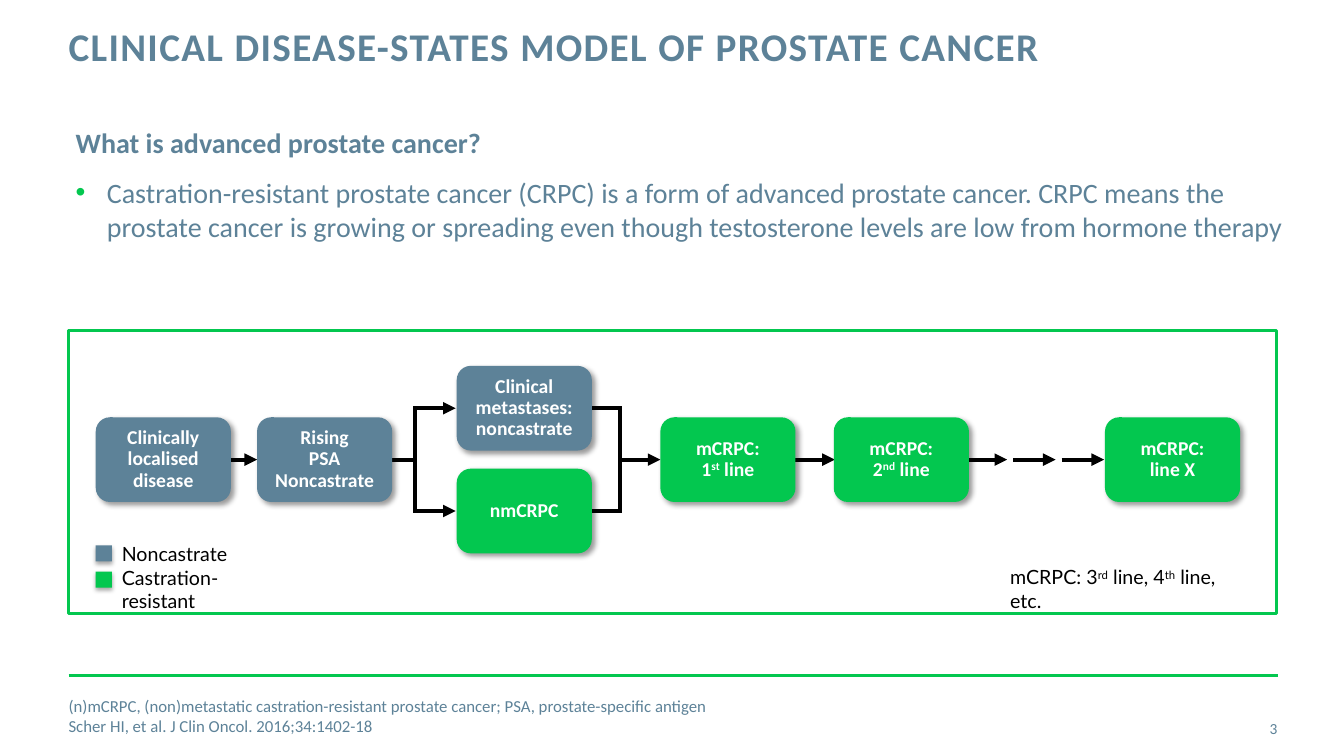
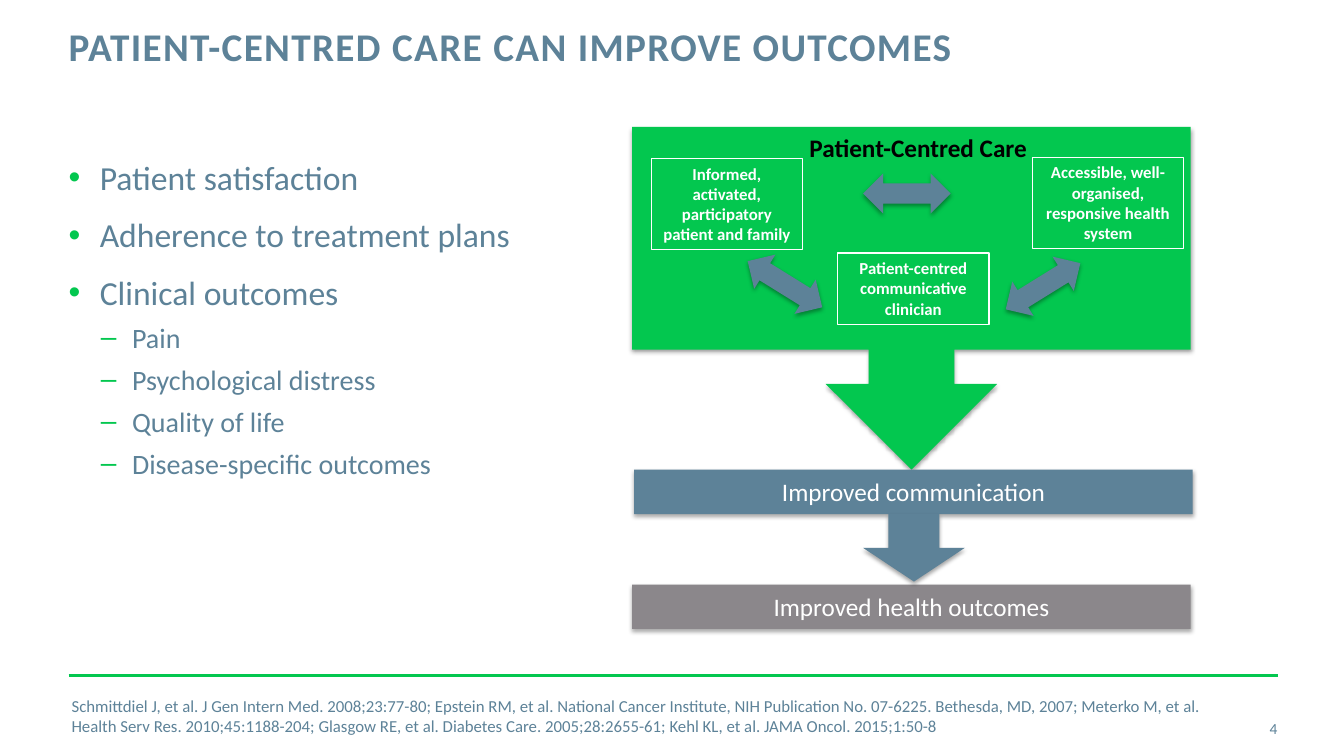
import lxml.etree
import pptx
import pptx.dml.color
import pptx.enum.shapes
import pptx.enum.text
import pptx.oxml.ns
import pptx.util

Inches = pptx.util.Inches
Pt = pptx.util.Pt
qn = pptx.oxml.ns.qn
KIND = pptx.enum.shapes.MSO_SHAPE
ALIGN = pptx.enum.text.PP_ALIGN
ANCHOR = pptx.enum.text.MSO_ANCHOR

COLOR = {
    "slate": "5D8298",
    "green": "03C74F",
    "gray": "8B878B",
    "white": "FFFFFF",
    "black": "000000",
}
DEEP = (40, 4, 3, 45)
SOFT = (35, 3.1, 1.8, 90)


def rgb(name):
    """Return a palette colour."""
    return pptx.dml.color.RGBColor.from_string(COLOR[name])


def child(node, tag, **attrs):
    """Append a drawing element with attributes."""
    item = lxml.etree.SubElement(node, qn("a:" + tag))
    for key, value in attrs.items():
        item.set(key, str(value))
    return item


def place(shape, box):
    """Move a shape to a box in inches."""
    shape.left, shape.top, shape.width, shape.height = map(Inches, box)


def style(par, size, color="slate", bold=False, font="Calibri", align=ALIGN.LEFT):
    """Set the font and alignment of a paragraph."""
    par.alignment = align
    par.font.name = font
    par.font.size = Pt(size)
    par.font.bold = bold
    par.font.color.rgb = rgb(color)


def write(par, text):
    """Add text with line breaks and ^raised^ parts."""
    for i, part in enumerate(text.split("^")):
        for j, line in enumerate(part.split("\n")):
            if j:
                par.add_line_break()
            if line:
                run = par.add_run()
                run.text = line
                if i % 2:
                    run.font._element.set("baseline", "30000")


def bullet(par, mark, left):
    """Give a paragraph a bullet, or none, and its indent."""
    prop = par._p.get_or_add_pPr()
    prop.set("marL", str(Inches(left)))
    prop.set("indent", str(Inches(-0.31 if mark else 0)))
    if mark:
        child(child(prop, "buClr"), "srgbClr", val=COLOR["green"])
        child(prop, "buChar", char=mark)
    else:
        child(prop, "buNone")


def setup(frame, inset=True, anchor=ANCHOR.TOP):
    """Set wrapping, insets and anchor of a text frame."""
    frame.word_wrap = True
    frame.auto_size = pptx.enum.text.MSO_AUTO_SIZE.NONE
    frame.vertical_anchor = anchor
    if not inset:
        frame.margin_left = frame.margin_right = 0
        frame.margin_top = frame.margin_bottom = 0
    return frame


def fill(frame, items):
    """Yield one paragraph with each item."""
    for i, item in enumerate(items):
        yield (frame.add_paragraph() if i else frame.paragraphs[0]), item


def shade(shape, look):
    """Give a shape an outer shadow."""
    alpha, blur, dist, angle = look
    shape.shadow.inherit = False
    glow = child(shape.element.spPr.find(qn("a:effectLst")), "outerShdw",
                 blurRad=Pt(blur), dist=Pt(dist), dir=angle * 60000,
                 algn="ctr", rotWithShape=0)
    tint = child(glow, "srgbClr", val=COLOR["black"])
    child(tint, "alpha", val=alpha * 1000)


def solid(slide, kind, box, color, look=SOFT, turn=0):
    """Add a filled shape with a shadow."""
    shape = slide.shapes.add_shape(kind, *map(Inches, box))
    shape.fill.solid()
    shape.fill.fore_color.rgb = rgb(color)
    shape.line.fill.background()
    shape.rotation = turn
    shade(shape, look)
    return shape


def outline(slide, box, color, width):
    """Add an unfilled rectangle."""
    shape = slide.shapes.add_shape(KIND.RECTANGLE, *map(Inches, box))
    shape.shadow.inherit = False
    shape.fill.background()
    shape.line.color.rgb = rgb(color)
    shape.line.width = Pt(width)
    return shape


def label(shape, text, size, bold=False, anchor=ANCHOR.MIDDLE):
    """Put centred white text in a shape."""
    par = setup(shape.text_frame, anchor=anchor).paragraphs[0]
    write(par, text)
    style(par, size, "white", bold, align=ALIGN.CENTER)
    return par


def note(slide, box, texts, size, font, bold=False):
    """Add a box of black text."""
    frame = setup(slide.shapes.add_textbox(*map(Inches, box)).text_frame)
    for par, text in fill(frame, texts):
        write(par, text)
        style(par, size, "black", bold, font)


def link(slide, start, end, color, width, arrow=False):
    """Add a straight line, with an arrowhead if asked."""
    line = slide.shapes.add_connector(
        pptx.enum.shapes.MSO_CONNECTOR.STRAIGHT, *map(Inches, start + end))
    line.line.color.rgb = rgb(color)
    line.line.width = Pt(width)
    if arrow:
        child(line.element.spPr.find(qn("a:ln")), "tailEnd", type="triangle")
    child(line.element.spPr, "effectLst")


def base(deck, title, number, cites, foot):
    """Add a slide with its title, rule, footer and number."""
    slide = deck.slides.add_slide(deck.slide_layouts[3])
    link(slide, (0.68, 6.7), (12.68, 6.7), "green", 2)

    head = slide.shapes.title
    place(head, (0.68, 0.27, 11.5, 0.88))
    par = setup(head.text_frame, False).paragraphs[0]
    write(par, title)
    style(par, 28, bold=True)
    par.line_spacing = Pt(30)
    par._p.pPr.find(qn("a:defRPr")).set("spc", "100")

    source = slide.placeholders[2]
    place(source, foot)
    frame = setup(source.text_frame, False, ANCHOR.MIDDLE)
    for par, text in fill(frame, cites):
        bullet(par, None, 0)
        write(par, text)
        style(par, 12)
        par.space_before = Pt(0)

    page = slide.shapes.add_textbox(*map(Inches, (11.81, 7.03, 0.86, 0.4)))
    par = setup(page.text_frame, False, ANCHOR.MIDDLE).paragraphs[0]
    write(par, str(number))
    style(par, 11, align=ALIGN.RIGHT)
    return slide


def points(slide, box, items):
    """Fill the body with (mark, left, size, gap, text) items."""
    body = slide.placeholders[1]
    place(body, box)
    frame = setup(body.text_frame, False)
    for par, (mark, left, size, gap, text) in fill(frame, items):
        par.level = int(mark == "–")
        bullet(par, mark, left)
        write(par, text)
        style(par, size, bold=not mark)
        par.space_before = Pt(gap)
    frame.paragraphs[0].space_before = Pt(0)


def flow(slide, box):
    """Draw the framed disease-states chart."""
    x, y, _, _ = box
    outline(slide, box, "green", 2.25)
    mid, high, low = 1.28, 0.77, 1.79
    arrows = [(left, mid) for left in (1.45, 5.45, 7.18, 8.89, 9.37, 9.85)]
    arrows += [(3.42, high), (3.42, low)]
    stubs = [(3.03, mid), (5.07, high), (5.07, low)]
    for left, top in arrows + stubs:
        link(slide, (x + left, y + top), (x + left + 0.42, y + top),
             "black", 3, (left, top) in arrows)
    for left in (3.44, 5.47):
        link(slide, (x + left, y + high - 0.01), (x + left, y + low + 0.01),
             "black", 3)
    states = [
        (0.27, mid, "slate", "Clinically\nlocalised\ndisease"),
        (1.87, mid, "slate", "Rising\nPSA\nNoncastrate"),
        (3.85, high, "slate", "Clinical\nmetastases:\nnoncastrate"),
        (3.85, low, "green", "nmCRPC"),
        (5.87, mid, "green", "mCRPC:\n1^st^ line"),
        (7.59, mid, "green", "mCRPC:\n2^nd^ line"),
        (10.28, mid, "green", "mCRPC:\nline X"),
    ]
    for left, top, color, text in states:
        node = solid(slide, KIND.ROUNDED_RECTANGLE,
                     (x + left, y + top - 0.42, 1.34, 0.84), color, DEEP)
        label(node, text, 14, True).line_spacing = 0.9
    for top, color in ((2.13, "slate"), (2.39, "green")):
        solid(slide, KIND.RECTANGLE, (x + 0.27, y + top, 0.16, 0.16), color)
    note(slide, (x + 0.43, y + 2.05, 1.77, 0.57),
         ["Noncastrate", "Castration-resistant"], 14, "Lato")
    note(slide, (x + 9.24, y + 2.28, 2.52, 0.34),
         ["mCRPC: 3^rd^ line, 4^th^ line, etc."], 14, "Lato")


def care(slide, box):
    """Draw the patient-centred care chart."""
    x, y, wide, _ = box
    solid(slide, KIND.DOWN_ARROW_CALLOUT, (x, y, wide, 3.4), "green")
    bars = [
        (0, 4.54, "gray", "Improved health outcomes"),
        (0.02, 3.4, "slate", "Improved communication"),
    ]
    for left, top, color, text in bars:
        bar = solid(slide, KIND.RECTANGLE, (x + left, y + top, wide, 0.44), color)
        label(bar, text, 18)
    solid(slide, KIND.DOWN_ARROW, (x + 2.29, y + 3.84, 1.01, 0.67), "slate")
    parts = [
        (0.19, 0.31, 0.91, "Informed, activated, participatory patient and family"),
        (3.97, 0.3, 0.91, "Accessible, well-organised, responsive health system"),
        (2.04, 1.25, 0.71, "Patient-centred communicative clinician"),
    ]
    for left, top, tall, text in parts:
        part = outline(slide, (x + left, y + top, 1.5, tall), "white", 0.75)
        label(part, text, 12, True, ANCHOR.TOP)
    note(slide, (x + 1.66, y, 3.46, 0.4), ["Patient-Centred Care"],
         18, "Calibri", True)
    for left, top, turn in ((2.29, 0.46, 0), (1.08, 1.36, 31.8), (3.64, 1.38, -31.8)):
        solid(slide, KIND.LEFT_RIGHT_ARROW, (x + left, y + top, 0.87, 0.4),
              "slate", turn=turn)


def main():
    """Build and save the deck."""
    deck = pptx.Presentation()
    deck.slide_width, deck.slide_height = Inches(13.33), Inches(7.5)

    slide = base(deck, "CLINICAL DISEASE-STATES MODEL OF PROSTATE CANCER", 3, [
        "(n)mCRPC, (non)metastatic castration-resistant prostate cancer; PSA, prostate-specific antigen",
        "Scher HI, et al. J Clin Oncol. 2016;34:1402-18",
    ], (0.68, 6.9, 11.58, 0.4))
    points(slide, (0.75, 1.24, 11.99, 1.49), [
        (None, 0, 20, 0, "What is advanced prostate cancer?"),
        ("•", 0.31, 20, 12, "Castration-resistant prostate cancer (CRPC) is a form of advanced prostate cancer. CRPC means the prostate cancer is growing or spreading even though testosterone levels are low from hormone therapy"),
    ])
    flow(slide, (0.68, 3.28, 11.98, 2.81))

    slide = base(deck, "PATIENT-CENTRED CARE CAN IMPROVE OUTCOMES", 4, [
        "Schmittdiel J, et al. J Gen Intern Med. 2008;23:77-80; Epstein RM, et al. National Cancer Institute, NIH Publication No. 07-6225. Bethesda, MD, 2007; Meterko M, et al. Health Serv Res. 2010;45:1188-204; Glasgow RE, et al. Diabetes Care. 2005;28:2655-61; Kehl KL, et al. JAMA Oncol. 2015;1:50-8",
    ], (0.71, 6.89, 11.5, 0.42))
    goals = ["Patient satisfaction", "Adherence to treatment plans", "Clinical outcomes"]
    kinds = ["Pain", "Psychological distress", "Quality of life", "Disease-specific outcomes"]
    points(slide, (0.68, 1.56, 5.36, 4.95),
           [("•", 0.31, 24, 12, text) for text in goals]
           + [("–", 0.63, 20, 6, text) for text in kinds])
    care(slide, (6.27, 1.26, 5.54, 4.98))

    deck.save("out.pptx")


if __name__ == "__main__":
    main()
